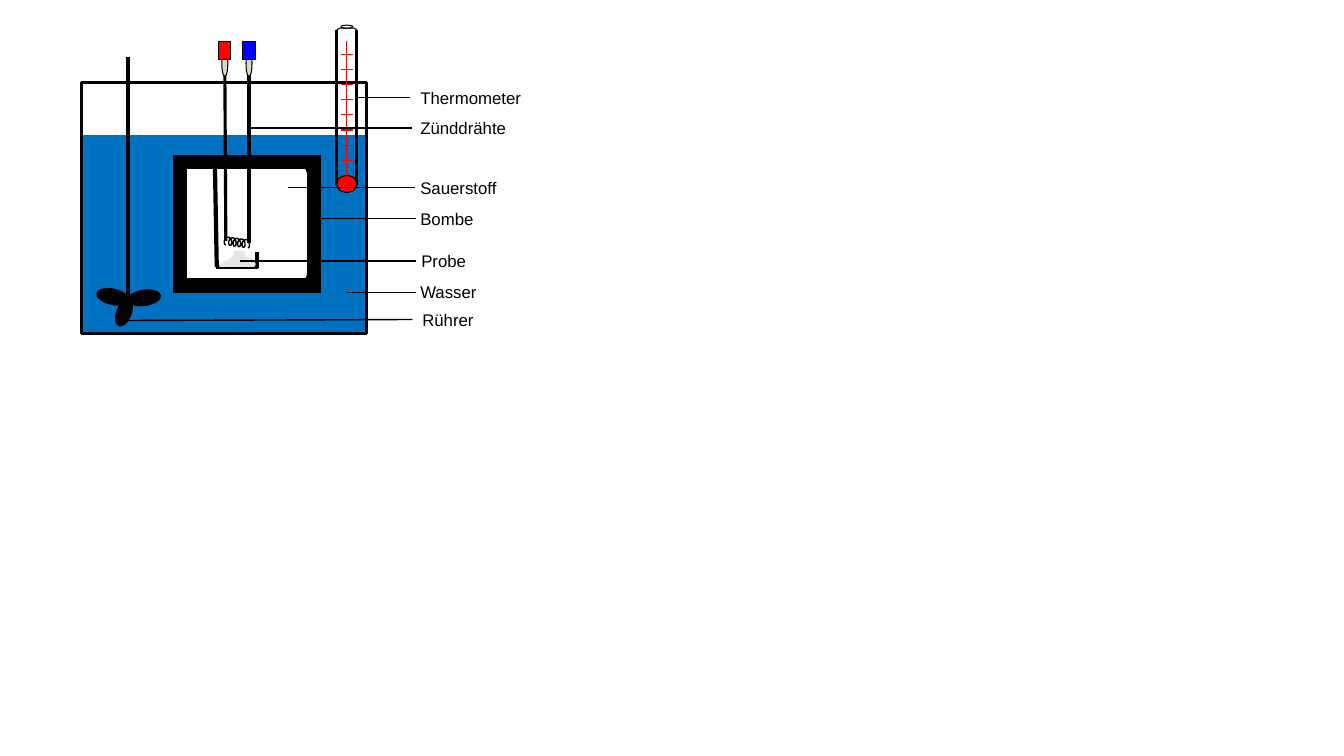
from dataclasses import dataclass
from math import cos, pi, sin

from lxml.etree import SubElement
from pptx import Presentation
from pptx.dml.color import RGBColor as Rgb
from pptx.enum.shapes import MSO_CONNECTOR as Link, MSO_SHAPE as Form
from pptx.enum.text import MSO_AUTO_SIZE as Fit
from pptx.oxml.ns import qn
from pptx.util import Inches, Pt


@dataclass(frozen=True)
class Theme:
    black: str = "000000"
    white: str = "FFFFFF"
    water: str = "0070C0"
    red: str = "FF0000"
    blue: str = "0000FF"
    grey: str = "E7E6E6"
    sleeve: str = "DFD6C3"
    font: str = "Arial"
    size: float = 12
    hair: float = 0
    scale: float = 0.75
    thin: float = 1
    edge: float = 1.5
    wire: float = 2.25
    thick: float = 3


@dataclass(frozen=True)
class Block:
    box: tuple[float, float, float, float]
    fill: str | None = None
    line: str | None = None
    width: float = 1
    form: Form = Form.RECTANGLE
    turn: float = 0


@dataclass(frozen=True)
class Stroke:
    start: tuple[float, float]
    end: tuple[float, float]
    width: float = 1
    color: str = "000000"


@dataclass(frozen=True)
class Label:
    text: str
    left: float
    start: tuple[float, float]
    end: tuple[float, float]


@dataclass(frozen=True)
class Plug:
    x: float
    foot: tuple[float, float]
    color: str


T = Theme()
OVAL = Form.OVAL

TANK = [
    Block((0.81, 1.34, 2.83, 1.96), T.water),
    Block((0.81, 0.82, 2.83, 2.49), None, T.black, T.wire),
]
GLASS = [
    Block((3.34, 1.74, 0.2, 0.17), T.red, T.black, T.hair, OVAL),
    Block((3.38, 0.25, 0.12, 0.03), None, T.black, T.hair, OVAL),
]
SIDES = [Stroke((x, 0.3), (x, 1.84), T.hair) for x in (3.34, 3.54)]
CAP = [(3.34, 0.3), (3.35, 0.29), (3.37, 0.28), (3.51, 0.28), (3.53, 0.29), (3.54, 0.3)]
TICKS = [
    Stroke((3.38, 0.54 + 0.15 * i), (3.5, 0.54 + 0.15 * i), T.scale, T.red)
    for i in range(10) if i != 8
]
ROOM = Block((1.8, 1.55, 1.26, 1.34), T.white, T.black, T.edge, Form.ROUNDED_RECTANGLE)
BLADES = [
    Block(box, T.black, T.black, T.thin, OVAL, turn)
    for box, turn in [
        ((0.96, 2.87, 0.32, 0.15), 12.2),
        ((1.27, 2.88, 0.32, 0.15), 352.3),
        ((1.16, 2.96, 0.14, 0.28), 21.4),
    ]
]
RODS = [
    Stroke((1.27, 2.97), (1.27, 0.57), T.thick),
    Stroke((2.15, 2.65), (2.13, 1.55), T.thick),
    Stroke((2.14, 2.65), (2.56, 2.65), T.thick),
    Stroke((2.55, 2.66), (2.55, 2.5), T.thick),
]
HEAP = [
    (2.18, 2.64), (2.22, 2.6), (2.26, 2.59), (2.28, 2.57), (2.31, 2.55),
    (2.32, 2.52), (2.33, 2.49), (2.35, 2.5), (2.38, 2.49), (2.42, 2.5),
    (2.43, 2.55), (2.46, 2.56), (2.5, 2.58), (2.53, 2.62), (2.52, 2.64),
]
WALLS = [
    Block(box, T.black, T.black)
    for box in [
        (1.8, 1.54, 1.26, 0.13), (1.8, 2.77, 1.26, 0.13),
        (1.72, 1.54, 0.13, 1.36), (3.05, 1.54, 0.13, 1.36),
    ]
]
PLUGS = [Plug(2.23, (2.24, 2.39), T.red), Plug(2.47, (2.47, 2.41), T.blue)]
LOOPS, STEPS = 5, 16
COIL = [
    (2.24 + 0.22 * u - 0.025 * sin(2 * pi * LOOPS * u),
     2.39 + 0.03 * u + 0.04 * cos(2 * pi * LOOPS * u))
    for u in (i / (LOOPS * STEPS) for i in range(LOOPS * STEPS + 1))
]
LABELS = [
    Label("Thermometer", 4.07, (4.07, 0.97), (3.53, 0.97)),
    Label("Zünddrähte", 4.07, (4.09, 1.27), (2.47, 1.27)),
    Label("Sauerstoff", 4.07, (4.12, 1.86), (2.86, 1.86)),
    Label("Bombe", 4.07, (4.13, 2.17), (3.11, 2.17)),
    Label("Probe", 4.08, (4.13, 2.59), (2.38, 2.59)),
    Label("Wasser", 4.07, (4.13, 2.9), (3.44, 2.9)),
    Label("Rührer", 4.09, (4.09, 3.17), (1.15, 3.18)),
]


def style(item, fill: str | None, line: str | None, width: float) -> None:
    item.shadow.inherit = False
    if fill:
        item.fill.solid()
        item.fill.fore_color.rgb = Rgb.from_string(fill)
    else:
        item.fill.background()
    if line:
        item.line.color.rgb = Rgb.from_string(line)
        item.line.width = Pt(width)
    else:
        item.line.fill.background()


def draw_block(shapes, block: Block) -> None:
    item = shapes.add_shape(block.form, *map(Inches, block.box))
    item.rotation = block.turn
    style(item, block.fill, block.line, block.width)


def draw_stroke(shapes, stroke: Stroke) -> None:
    item = shapes.add_connector(Link.STRAIGHT, *map(Inches, stroke.start + stroke.end))
    item.line.color.rgb = Rgb.from_string(stroke.color)
    item.line.width = Pt(stroke.width)
    SubElement(item._element.spPr, qn("a:effectLst"))


def draw_path(shapes, points: list[tuple[float, float]], fill: str | None = None,
              line: str = T.black, width: float = T.thin) -> None:
    spots = [(Inches(x), Inches(y)) for x, y in points]
    pen = shapes.build_freeform(*spots[0])
    pen.add_line_segments(spots[1:], close=fill is not None)
    style(pen.convert_to_shape(), fill, line, width)


def draw_plug(shapes, plug: Plug) -> None:
    x = plug.x
    draw_stroke(shapes, Stroke((x, 0.69), plug.foot, T.wire))
    draw_block(shapes, Block((x - 0.03, 0.5, 0.06, 0.26), T.sleeve, T.black, T.hair, OVAL))
    draw_block(shapes, Block((x - 0.06, 0.41, 0.12, 0.18), plug.color, T.black, T.hair))


def add_text(shapes, text: str, *, left: float, top: float, wide: float = 3.72,
             high: float = 0.3, size: float = T.size, color: str = T.black) -> None:
    frame = shapes.add_textbox(*map(Inches, (left, top, wide, high))).text_frame
    frame.word_wrap = True
    frame.auto_size = Fit.SHAPE_TO_FIT_TEXT
    run = frame.paragraphs[0].add_run()
    run.text = text
    run.font.name = T.font
    run.font.size = Pt(size)
    run.font.color.rgb = Rgb.from_string(color)


def draw_device(shapes) -> None:
    for block in TANK:
        draw_block(shapes, block)
    for side in SIDES:
        draw_stroke(shapes, side)
    draw_path(shapes, CAP, width=T.hair)
    for block in GLASS:
        draw_block(shapes, block)
    draw_stroke(shapes, Stroke((3.44, 1.74), (3.44, 0.41), T.scale, T.red))
    for tick in TICKS:
        draw_stroke(shapes, tick)
    for block in [ROOM, *BLADES]:
        draw_block(shapes, block)
    for rod in RODS:
        draw_stroke(shapes, rod)
    draw_path(shapes, HEAP, T.grey, T.grey)
    for wall in WALLS:
        draw_block(shapes, wall)
    for plug in PLUGS:
        draw_plug(shapes, plug)
    draw_path(shapes, COIL)


def main() -> None:
    deck = Presentation()
    deck.slide_width, deck.slide_height = Inches(13.33), Inches(7.5)
    shapes = deck.slides.add_slide(deck.slide_layouts[6]).shapes
    draw_device(shapes.add_group_shape().shapes)
    for label in LABELS:
        add_text(shapes, label.text, left=label.left, top=label.start[1] - 0.15)
    for label in LABELS:
        draw_stroke(shapes, Stroke(label.start, label.end))
    deck.save("out.pptx")


if __name__ == "__main__":
    main()
